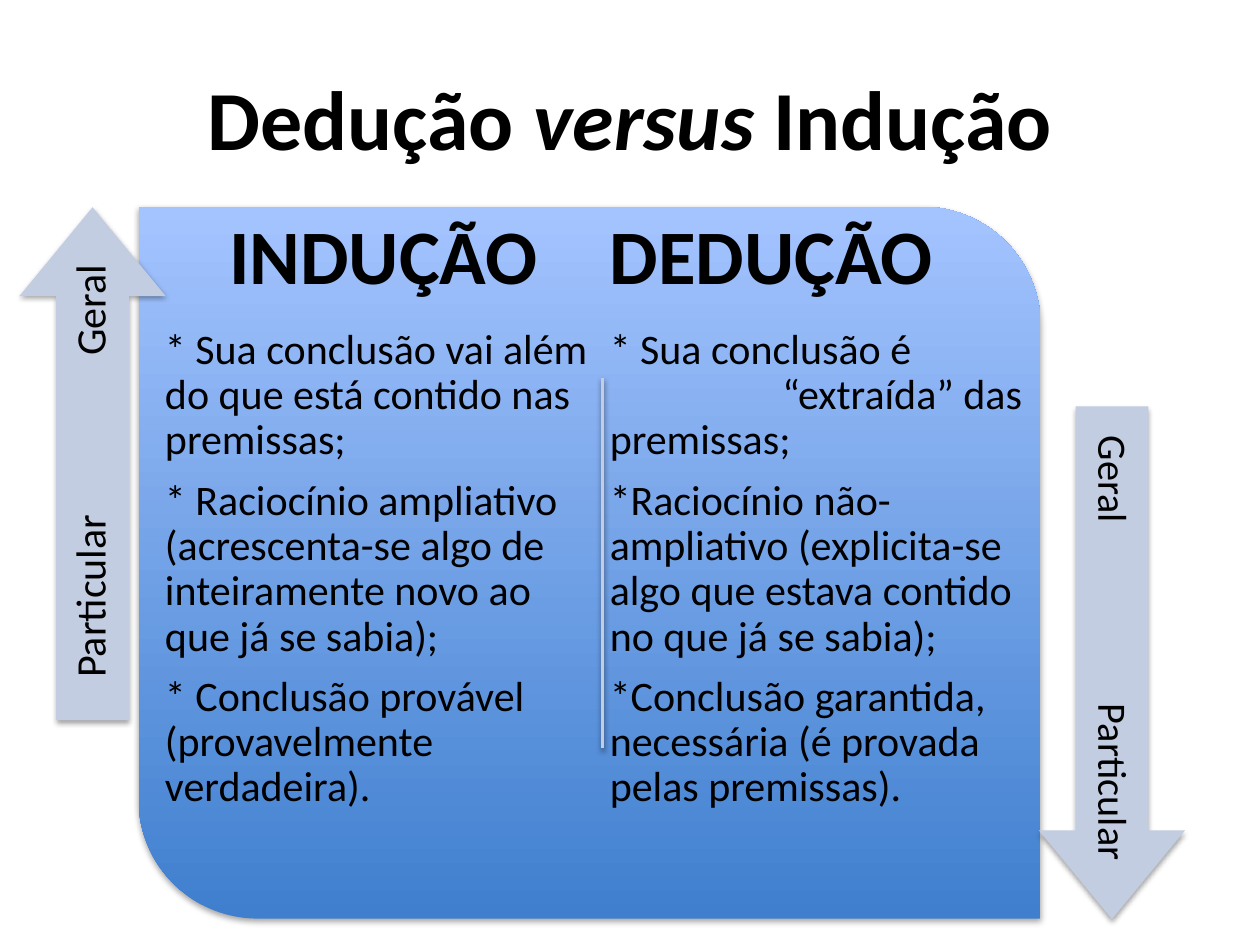
from lxml import etree
from pptx import Presentation
from pptx.dml.color import RGBColor
from pptx.enum.shapes import MSO_CONNECTOR, MSO_SHAPE
from pptx.enum.text import MSO_ANCHOR, PP_ALIGN
from pptx.oxml.ns import qn
from pptx.util import Inches, Pt

TITLE = [("Dedução ", False), ("versus ", True), ("Indução", False)]
COLUMNS = [
    (1.13, 3.83, PP_ALIGN.CENTER, "INDUÇÃO", [
        "* Sua conclusão vai além do que está contido nas premissas;",
        "* Raciocínio ampliativo (acrescenta-se algo de inteiramente novo ao que já se sabia);",
        "* Conclusão provável (provavelmente verdadeira)."]),
    (4.66, 3.7, PP_ALIGN.LEFT, "DEDUÇÃO", [
        "* Sua conclusão é\v\t“extraída” das premissas;",
        "*Raciocínio não-ampliativo (explicita-se algo que estava contido no que já se sabia);",
        "*Conclusão garantida, necessária (é provada pelas premissas)."]),
]
ARROWS = [
    dict(arrow=(-1.3, 3.1), label=(-1.13, 3.56), rotation=270,
         text="Particular\tGeral", size=24, inset=0.33, tab=(3.28, "r")),
    dict(arrow=(6.79, 4.68), label=(6.96, 4.8), rotation=90,
         text="Geral\tParticular", size=23, inset=0.23, tab=(3.37, "r")),
]
QUOTE_TAB = (1.37, "l")
PALE = "C2CDE1"


def rgb(value):
    return RGBColor.from_string(value)


def add_shadow(sp, opacity, distance):
    effects = etree.SubElement(sp._element.spPr, qn("a:effectLst"))
    shadow = etree.SubElement(effects, qn("a:outerShdw"), blurRad=str(Pt(3.1)),
                              dist=str(Pt(distance)), dir="5400000", rotWithShape="0")
    color = etree.SubElement(shadow, qn("a:srgbClr"), val="000000")
    etree.SubElement(color, qn("a:alpha"), val=str(opacity * 1000))


def add_box(s, x, y, w, h, inset=(0.1, 0.05, 0.1, 0.05), anchor=MSO_ANCHOR.TOP, rotation=0):
    sp = s.shapes.add_textbox(Inches(x), Inches(y), Inches(w), Inches(h))
    sp.rotation = rotation
    tf = sp.text_frame
    tf.word_wrap = True
    tf.vertical_anchor = anchor
    tf.margin_left, tf.margin_top, tf.margin_right, tf.margin_bottom = map(Inches, inset)
    return tf


def style(p, size, bold=False, align=PP_ALIGN.LEFT, spacing=0.9, after=0, tab=None):
    p.alignment = align
    p.line_spacing = spacing
    p.space_after = Pt(after)
    if tab:
        tabs = etree.SubElement(p._p.get_or_add_pPr(), qn("a:tabLst"))
        etree.SubElement(tabs, qn("a:tab"), pos=str(Inches(tab[0])), algn=tab[1])
    for r in p.runs:
        r.font.name = "Calibri"
        r.font.size = Pt(size)
        r.font.bold = bold
        r.font.color.rgb = rgb("000000")


def add_title(s):
    p = add_box(s, 0.5, 0.3, 9, 1.25, anchor=MSO_ANCHOR.MIDDLE).paragraphs[0]
    for text, italic in TITLE:
        r = p.add_run()
        r.text = text
        r.font.italic = italic
    style(p, 48, bold=True, align=PP_ALIGN.CENTER, spacing=1.0)


def add_panel(s):
    sp = s.shapes.add_shape(MSO_SHAPE.ROUND_2_DIAG_RECTANGLE,
                            Inches(1.1), Inches(1.64), Inches(7.16), Inches(5.65))
    sp.adjustments[0], sp.adjustments[1] = 0, 0.167
    sp.fill.gradient()
    sp.fill.gradient_angle = 90
    for stop, color in zip(sp.fill.gradient_stops, ("3F7FCE", "A4C4FF")):
        stop.color.rgb = rgb(color)
    sp.line.fill.background()
    add_shadow(sp, 35, 1.8)

    line = s.shapes.add_connector(MSO_CONNECTOR.STRAIGHT,
                                  Inches(4.78), Inches(3), Inches(4.78), Inches(5.94))
    line.line.color.rgb = rgb(PALE)
    line.line.width = Pt(2)
    add_shadow(line, 38, 1.6)


def add_column(s, x, w, align, heading, points):
    tf = add_box(s, x, 1.55, w, 5.83, inset=(0.18,) * 4)
    p = tf.paragraphs[0]
    p.text = heading
    style(p, 44, bold=True, align=align, after=15.4)
    for point in points:
        p = tf.add_paragraph()
        p.text = point
        style(p, 24, after=8.4, tab=QUOTE_TAB if "\t" in point else None)


def add_arrow(s, arrow, label, rotation, text, size, inset, tab):
    sp = s.shapes.add_shape(MSO_SHAPE.RIGHT_ARROW, *map(Inches, (*arrow, 4.07, 1.16)))
    sp.adjustments[0], sp.adjustments[1] = 0.498, 0.607
    sp.rotation = rotation
    sp.fill.solid()
    sp.fill.fore_color.rgb = rgb(PALE)
    sp.line.fill.background()
    add_shadow(sp, 35, 1.8)
    tf = add_box(s, *label, 3.72, 0.58, inset=(inset, 0.1, 0.1, 0.1),
                 anchor=MSO_ANCHOR.MIDDLE, rotation=rotation)
    p = tf.paragraphs[0]
    p.text = text
    style(p, size, tab=tab)


def main():
    prs = Presentation()
    prs.slide_width, prs.slide_height = Inches(10), Inches(7.5)
    s = prs.slides.add_slide(prs.slide_layouts[6])
    add_title(s)
    add_panel(s)
    for column in COLUMNS:
        add_column(s, *column)
    for arrow in ARROWS:
        add_arrow(s, **arrow)
    prs.save("out.pptx")


if __name__ == "__main__":
    main()
